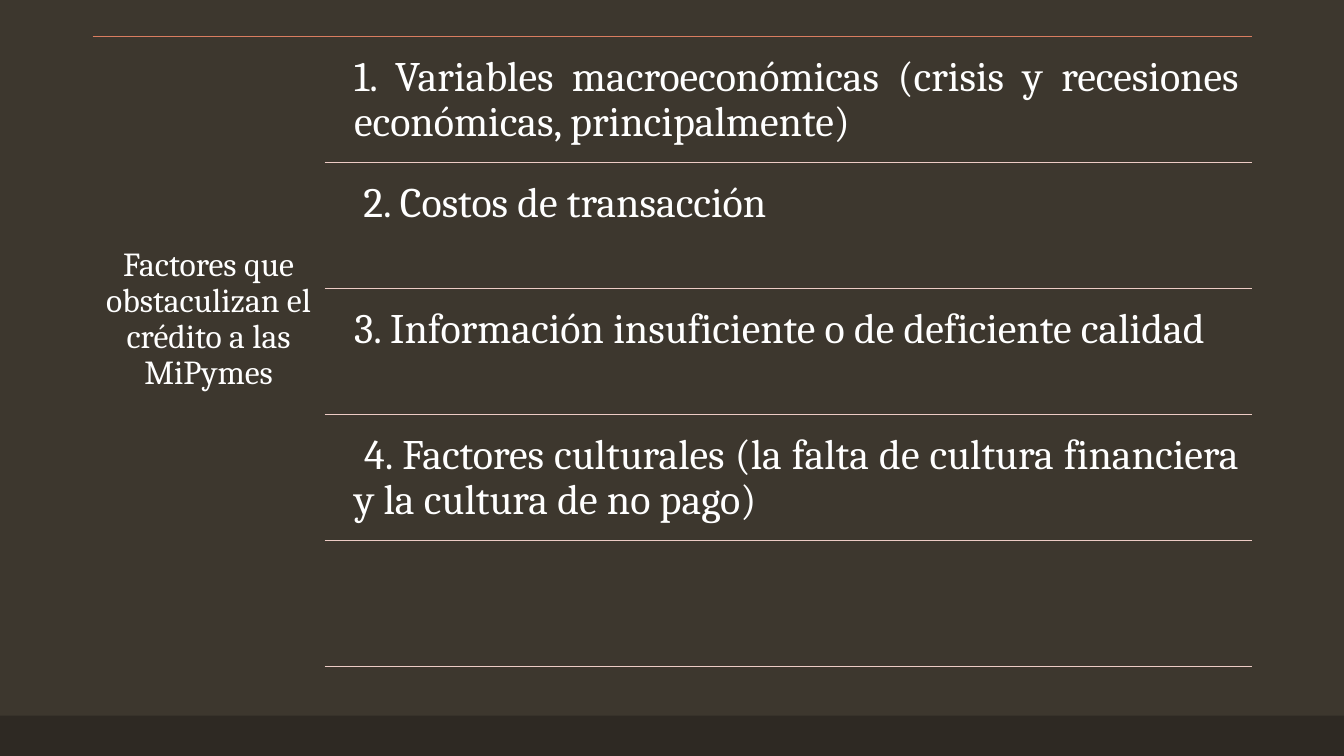
"""Build a slide listing the factors that hinder credit to MiPymes."""
from dataclasses import dataclass

from lxml import etree
from pptx import Presentation
from pptx.dml.color import RGBColor
from pptx.enum.shapes import MSO_CONNECTOR, MSO_SHAPE
from pptx.enum.text import MSO_ANCHOR, PP_ALIGN
from pptx.oxml.ns import qn
from pptx.util import Pt

STRAIGHT = MSO_CONNECTOR.STRAIGHT
RECTANGLE = MSO_SHAPE.RECTANGLE
TOP = MSO_ANCHOR.TOP
CENTER = PP_ALIGN.CENTER
JUSTIFY = PP_ALIGN.JUSTIFY


@dataclass(frozen=True)
class Theme:
    """Colours, font and type sizes of the slide."""

    background: str = "3D372E"
    band: str = "2E2923"
    top_rule: str = "DA7D60"
    divider: str = "EDCCC5"
    text: str = "FFFFFF"
    font: str = "Cambria"
    heading_size: float = 24
    item_size: float = 30


THEME = Theme()
SLIDE_WIDTH, SLIDE_HEIGHT = 960, 540
BAND_HEIGHT = 28.8
LEFT, RIGHT = 66.2, 894.2
LIST_TOP = 26
ROW_PITCH = 90
ROW_COUNT = 5
DIVIDER_LEFT = 231.8
ITEM_LEFT = 244
ITEM_OFFSET = 4.3
ITEM_HEIGHT = 85.7
HEADING = "Factores que obstaculizan el crédito a las MiPymes"
HEADING_BOX = (LEFT, 169.2, 165.6, 120)
FACTORS = (
    "1. Variables macroeconómicas (crisis y recesiones económicas, principalmente)",
    " 2. Costos de transacción ",
    "3. Información insuficiente o de deficiente calidad",
    " 4. Factores culturales (la falta de cultura financiera y la cultura de no pago)",
)


def add_band(slide):
    """Draw the dark band along the bottom edge."""
    band = slide.shapes.add_shape(
        RECTANGLE, 0, Pt(SLIDE_HEIGHT - BAND_HEIGHT), Pt(SLIDE_WIDTH), Pt(BAND_HEIGHT)
    )
    band.shadow.inherit = False
    band.fill.solid()
    band.fill.fore_color.rgb = RGBColor.from_string(THEME.band)
    band.line.fill.background()


def add_rule(slide, left, top, color):
    """Draw a thin horizontal rule from left to the right margin."""
    rule = slide.shapes.add_connector(STRAIGHT, Pt(left), Pt(top), Pt(RIGHT), Pt(top))
    rule.line.width = Pt(1)
    rule.line.color.rgb = RGBColor.from_string(color)
    etree.SubElement(rule._element.spPr, qn("a:effectLst"))


def add_text(slide, text, box, size, alignment, inset):
    """Place one wrapped paragraph in a box of left, top, width and height."""
    text_box = slide.shapes.add_textbox(*(Pt(length) for length in box))
    frame = text_box.text_frame
    frame.word_wrap = True
    frame.vertical_anchor = TOP
    frame.margin_left = frame.margin_right = Pt(inset)
    frame.margin_top = frame.margin_bottom = Pt(inset)
    frame.text = text
    paragraph = frame.paragraphs[0]
    paragraph.alignment = alignment
    paragraph.line_spacing = 0.9
    font = paragraph.runs[0].font
    font.name = THEME.font
    font.size = Pt(size)
    font.color.rgb = RGBColor.from_string(THEME.text)


def main():
    """Compose the slide and save it."""
    presentation = Presentation()
    presentation.slide_width = Pt(SLIDE_WIDTH)
    presentation.slide_height = Pt(SLIDE_HEIGHT)
    slide = presentation.slides.add_slide(presentation.slide_layouts[6])
    slide.background.fill.solid()
    slide.background.fill.fore_color.rgb = RGBColor.from_string(THEME.background)

    add_band(slide)
    add_rule(slide, LEFT, LIST_TOP, THEME.top_rule)
    add_text(slide, HEADING, HEADING_BOX, THEME.heading_size, CENTER, 7.2)
    for row, factor in enumerate(FACTORS):
        top = LIST_TOP + row * ROW_PITCH + ITEM_OFFSET
        box = (ITEM_LEFT, top, RIGHT - ITEM_LEFT, ITEM_HEIGHT)
        add_text(slide, factor, box, THEME.item_size, JUSTIFY, 9)
    for row in range(1, ROW_COUNT + 1):
        add_rule(slide, DIVIDER_LEFT, LIST_TOP + row * ROW_PITCH, THEME.divider)

    presentation.save("out.pptx")


if __name__ == "__main__":
    main()
